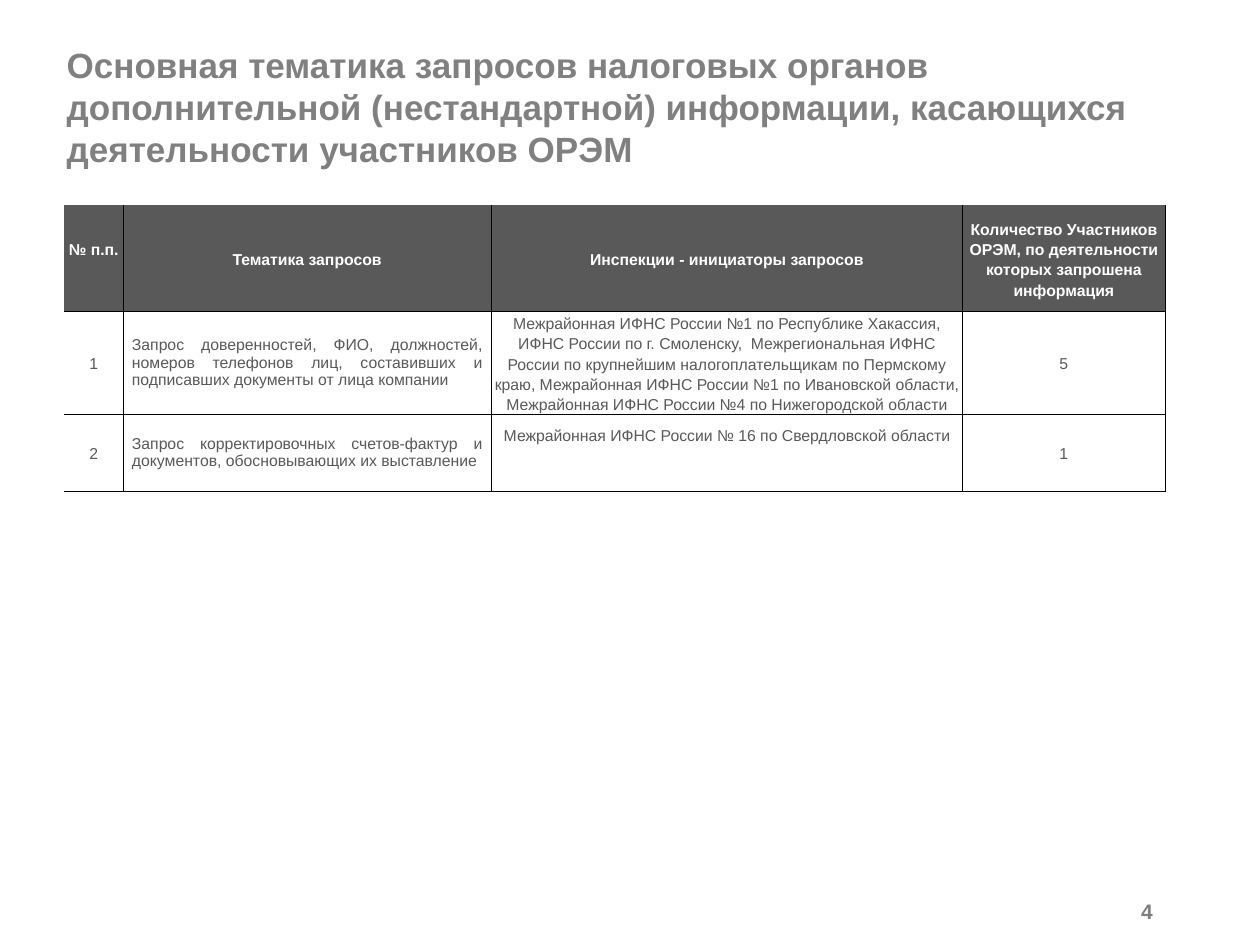
from lxml.etree import SubElement
from pptx import Presentation
from pptx.dml.color import RGBColor
from pptx.enum.text import MSO_ANCHOR as Anchor, MSO_AUTO_SIZE as AutoSize, PP_ALIGN as Align
from pptx.oxml.ns import qn
from pptx.util import Cm, Pt

COLUMNS = (1.18, 7.42, 9.5, 4.09)
ROWS = (2.13, 2.08, 1.55)
JUSTIFIED = 1
INSPECTIONS = 2
CONTENT = (
    ("№ п.п.", "Тематика запросов", "Инспекции - инициаторы запросов",
     "Количество Участников ОРЭМ, по деятельности которых запрошена информация"),
    ("1",
     "Запрос доверенностей, ФИО, должностей, номеров телефонов лиц, "
     "составивших и подписавших документы от лица компании",
     "Межрайонная ИФНС России №1 по Республике Хакассия, "
     "ИФНС России по г. Смоленску,  Межрегиональная ИФНС России "
     "по крупнейшим налогоплательщикам по Пермскому краю, "
     "Межрайонная ИФНС России №1 по Ивановской области, "
     "Межрайонная ИФНС России №4 по Нижегородской области",
     "5"),
    ("2",
     "Запрос корректировочных счетов-фактур и документов, обосновывающих их выставление",
     "Межрайонная ИФНС России № 16 по Свердловской области",
     "1"),
)
# Extra bottom margin (cm) that lifts the text of single cells
LIFT = {(0, 0): 0.35, (2, INSPECTIONS): 0.75}


def rgb(color):
    return RGBColor.from_string(color)


def add_run(p, text, size, color, bold=False):
    r = p.add_run()
    r.text = text
    r.font.name = "Arial"
    r.font.size = Pt(size)
    r.font.bold = bold
    r.font.color.rgb = rgb(color)


def set_borders(cell, visible):
    """Draw the sides named in visible (from "LRTB") and clear the others."""
    tcPr = cell._tc.get_or_add_tcPr()
    for side in "LRTB":
        ln = SubElement(tcPr, qn(f"a:ln{side}"), w=str(Pt(0.5)))
        if side in visible:
            fill = SubElement(ln, qn("a:solidFill"))
            SubElement(fill, qn("a:srgbClr"), val="000000")
        else:
            SubElement(ln, qn("a:noFill"))


def add_title(slide, left, top, width, height):
    s = slide.shapes.title
    s.left, s.top, s.width, s.height = map(Cm, (left, top, width, height))
    tf = s.text_frame
    tf.word_wrap = True
    tf.auto_size = AutoSize.NONE
    tf.vertical_anchor = Anchor.MIDDLE
    p = tf.paragraphs[0]
    p.alignment = Align.LEFT
    add_run(p, "Основная тематика запросов налоговых органов дополнительной "
               "(нестандартной) информации, касающихся деятельности участников ОРЭМ",
            20, "808080", bold=True)


def fill_cell(cell, text, row, col):
    header = row == 0
    justified = not header and col == JUSTIFIED
    tight = header or col == INSPECTIONS
    set_borders(cell, "RB" + ("L" if col else "") + ("" if header else "T"))
    cell.fill.solid()
    cell.fill.fore_color.rgb = rgb("595959" if header else "FFFFFF")
    cell.vertical_anchor = Anchor.MIDDLE
    cell.margin_left = cell.margin_right = Cm(0.03 if tight else 0.18)
    cell.margin_top = Cm(0.03 if tight else 0)
    cell.margin_bottom = Cm(LIFT.get((row, col), 0))
    p = cell.text_frame.paragraphs[0]
    p.alignment = Align.JUSTIFY if justified else Align.CENTER
    p.line_spacing = 1.0 if justified or (header and col == 0) else 1.15
    add_run(p, text, 9, "FFFFFF" if header else "595959", bold=header)


def add_requests_table(slide, left, top):
    frame = slide.shapes.add_table(len(ROWS), len(COLUMNS), Cm(left), Cm(top),
                                   Cm(sum(COLUMNS)), Cm(sum(ROWS)))
    table = frame.table
    table.horz_banding = False
    for column, width in zip(table.columns, COLUMNS):
        column.width = Cm(width)
    for i, (row, height) in enumerate(zip(table.rows, ROWS)):
        row.height = Cm(height)
        for j, cell in enumerate(row.cells):
            fill_cell(cell, CONTENT[i][j], i, j)


def add_page_number(slide, left, top, width, height):
    s = slide.shapes.add_textbox(*map(Cm, (left, top, width, height)))
    tf = s.text_frame
    tf.word_wrap = True
    tf.vertical_anchor = Anchor.MIDDLE
    p = tf.paragraphs[0]
    p.alignment = Align.RIGHT
    add_run(p, "4", 12, "7F7F7F", bold=True)


def main():
    prs = Presentation()
    prs.slide_width, prs.slide_height = Cm(25.4), Cm(19.05)
    slide = prs.slides.add_slide(prs.slide_layouts.get_by_name("Title Only"))
    add_title(slide, 1.09, 0.76, 22.4, 2.77)
    add_requests_table(slide, 1.3, 4.14)
    add_page_number(slide, 20.7, 17.93, 2.79, 0.86)
    prs.save("out.pptx")


if __name__ == "__main__":
    main()
